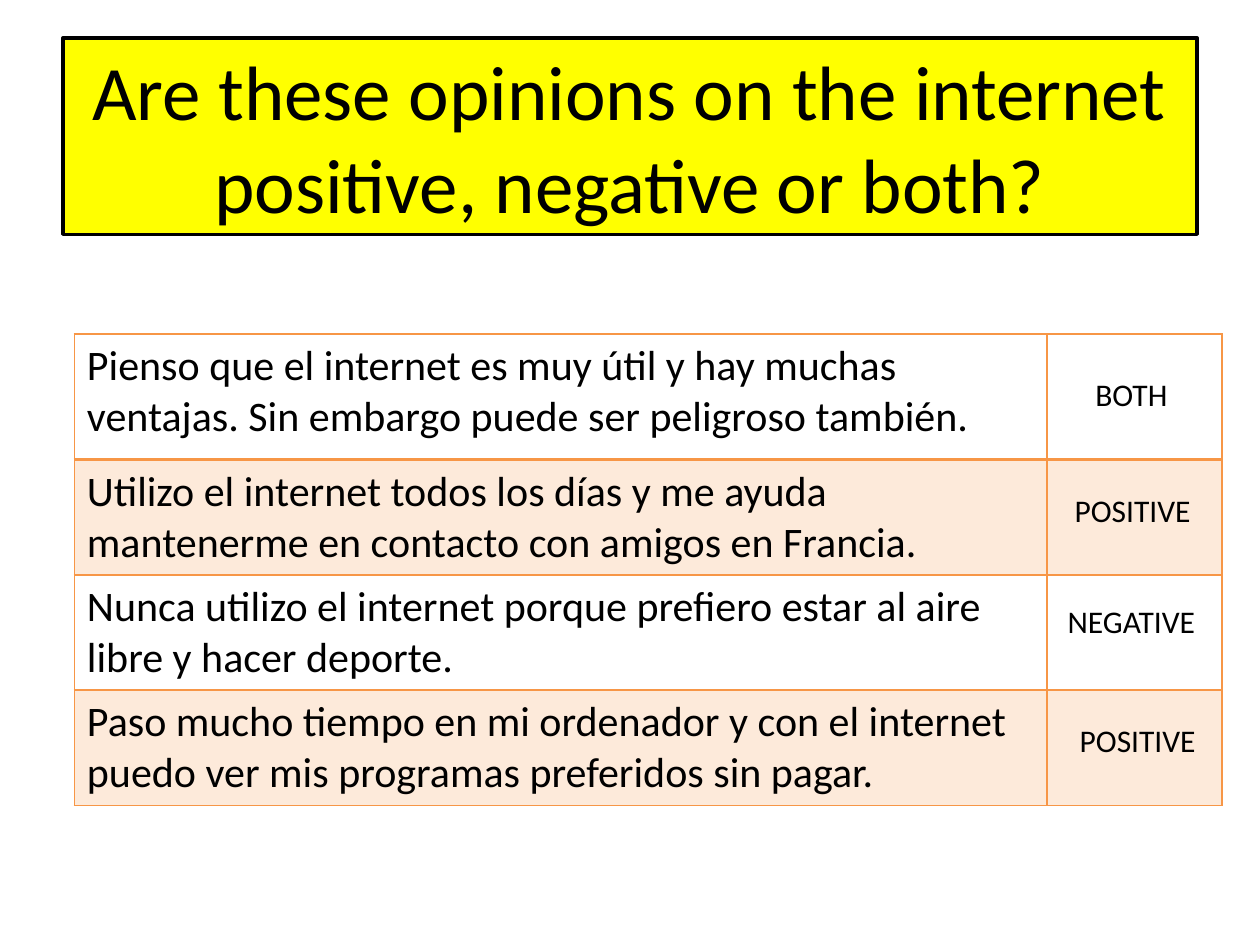
"""Build a quiz slide of opinions on the internet with their answers."""
from lxml.etree import SubElement
from pptx import Presentation
from pptx.dml.color import RGBColor
from pptx.enum.text import MSO_ANCHOR as Anchor, MSO_AUTO_SIZE as AutoSize, PP_ALIGN as Align
from pptx.oxml.ns import qn
from pptx.util import Inches, Pt

TITLE = "Are these opinions on the internet positive, negative or both?"
OPINIONS = [
    "Pienso que el internet es muy útil y hay muchas ventajas. Sin embargo puede ser peligroso también.",
    "Utilizo el internet todos los días y me ayuda mantenerme en contacto con amigos en Francia.",
    "Nunca utilizo el internet porque prefiero estar al aire libre y hacer deporte.",
    "Paso mucho tiempo en mi ordenador y con el internet puedo ver mis programas preferidos sin pagar.",
]
ANSWERS = [
    ("BOTH", 8.31, 2.93),
    ("POSITIVE", 8.32, 3.85),
    ("NEGATIVE", 8.31, 4.73),
    ("POSITIVE", 8.36, 5.67),
]
COLUMN_WIDTHS = (7.72, 1.39)
ROW_HEIGHTS = (1, 0.91, 0.91, 0.91)

FONT = "Calibri"
BLACK = RGBColor(0x00, 0x00, 0x00)
WHITE = RGBColor(0xFF, 0xFF, 0xFF)
YELLOW = RGBColor(0xFF, 0xFF, 0x00)
ORANGE = RGBColor(0xF7, 0x96, 0x46)
PEACH = RGBColor(0xFD, 0xEA, 0xDA)


def write(frame, text, size, align):
    frame.word_wrap = True
    para = frame.paragraphs[0]
    para.text = text
    para.alignment = align
    para.font.name = FONT
    para.font.size = Pt(size)
    para.font.color.rgb = BLACK


def add_title(page):
    title = page.shapes.title
    title.left, title.top = Inches(0.5), Inches(0.3)
    title.width, title.height = Inches(9), Inches(1.56)
    title.fill.solid()
    title.fill.fore_color.rgb = YELLOW
    title.line.color.rgb = BLACK
    title.line.width = Pt(2)
    frame = title.text_frame
    frame.auto_size = AutoSize.NONE
    frame.vertical_anchor = Anchor.MIDDLE
    write(frame, TITLE, 44, Align.CENTER)


def set_borders(cell, widths):
    properties = cell._tc.get_or_add_tcPr()
    for side, width in zip("LRTB", widths):
        line = SubElement(properties, qn(f"a:ln{side}"), w=str(Pt(width)))
        fill = SubElement(line, qn("a:solidFill"))
        SubElement(fill, qn("a:srgbClr"), val=str(ORANGE))


def add_opinions(page):
    table = page.shapes.add_table(
        len(OPINIONS), len(COLUMN_WIDTHS), Inches(0.59), Inches(2.65),
        Inches(sum(COLUMN_WIDTHS)), Inches(sum(ROW_HEIGHTS))).table
    table.first_row = table.horz_banding = False
    for column, width in zip(table.columns, COLUMN_WIDTHS):
        column.width = Inches(width)
    for index, (row, height, opinion) in enumerate(zip(table.rows, ROW_HEIGHTS, OPINIONS)):
        row.height = Inches(height)
        top = 2 if index == 1 else 1
        bottom = 2 if index == 0 else 1
        for cell in row.cells:
            set_borders(cell, (1, 1, top, bottom))
            cell.fill.solid()
            cell.fill.fore_color.rgb = PEACH if index % 2 else WHITE
        write(row.cells[0].text_frame, opinion, 24, Align.LEFT)


def add_answers(page):
    for answer, left, top in ANSWERS:
        box = page.shapes.add_textbox(Inches(left), Inches(top), Inches(1.34), Inches(0.4))
        box.text_frame.auto_size = AutoSize.SHAPE_TO_FIT_TEXT
        write(box.text_frame, answer, 18, Align.CENTER)


def main():
    deck = Presentation()
    deck.slide_width, deck.slide_height = Inches(10), Inches(7.5)
    page = deck.slides.add_slide(deck.slide_layouts[5])
    add_title(page)
    add_opinions(page)
    add_answers(page)
    deck.save("out.pptx")


if __name__ == "__main__":
    main()
